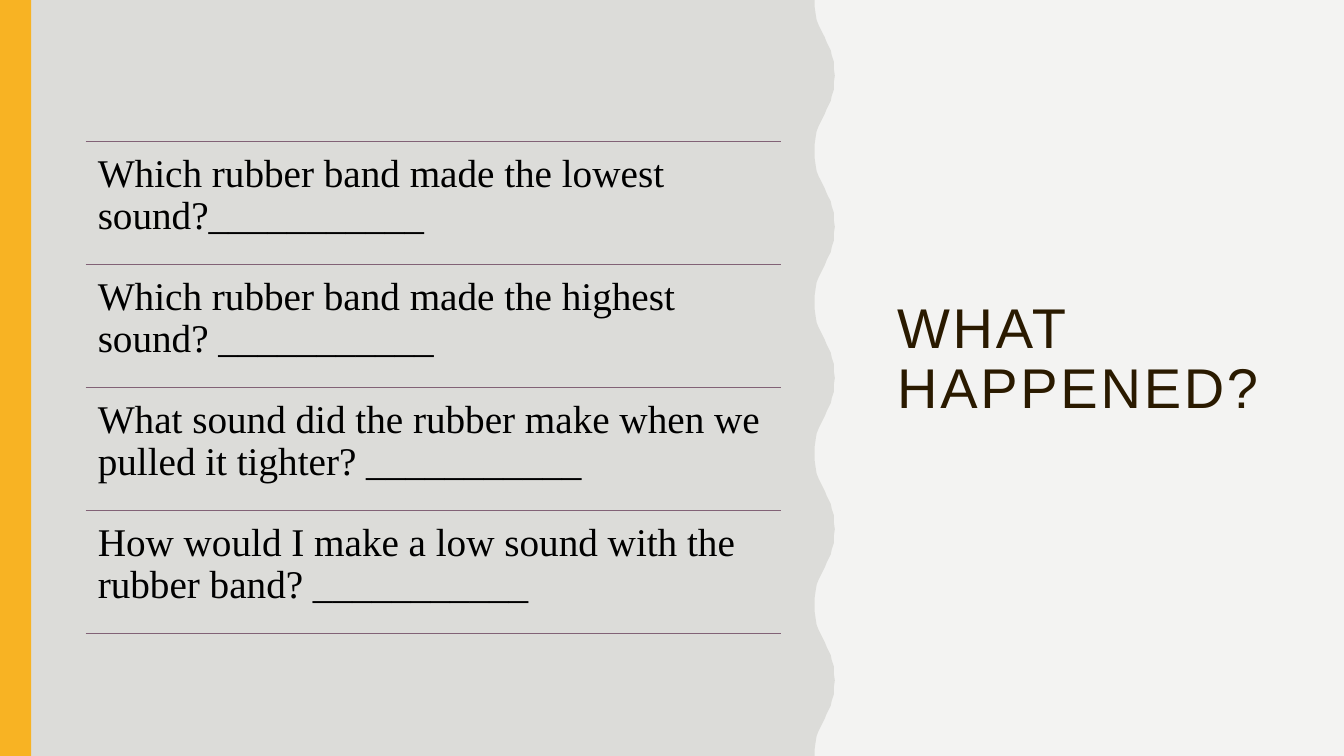
from pptx import Presentation
from pptx.dml.color import RGBColor
from pptx.enum import shapes, text
from pptx.oxml import xmlchemy
from pptx.util import Inches, Pt

PAPER = RGBColor(0xF3, 0xF3, 0xF2)
PANEL = RGBColor(0xDC, 0xDC, 0xD9)
GOLD = RGBColor(0xF8, 0xB3, 0x23)
BROWN = RGBColor(0x2A, 0x1A, 0x00)
BLACK = RGBColor(0x00, 0x00, 0x00)
PLUM = RGBColor(0x82, 0x62, 0x76)

QUESTIONS = [
    "Which rubber band made the lowest sound?___________",
    "Which rubber band made the highest sound? ___________",
    "What sound did the rubber make when we pulled it tighter? ___________",
    "How would I make a low sound with the rubber band? ___________",
]
LIST_LEFT, LIST_TOP, LIST_WIDTH, ROW_HEIGHT = 0.85, 1.4, 6.9, 1.22

# Half a wave, from trough to crest: (down, x)
HALF_WAVE = [
    (0, 8.08), (0.07, 8.08), (0.14, 8.09), (0.2, 8.1), (0.25, 8.12),
    (0.29, 8.14), (0.33, 8.16), (0.37, 8.18), (0.42, 8.2), (0.46, 8.22),
    (0.5, 8.24), (0.55, 8.25), (0.61, 8.27), (0.68, 8.27), (0.75, 8.28),
]
WAVE_PERIOD, WAVE_COUNT = 1.5, 5


def paint(shape, color):
    shape.shadow.inherit = False
    shape.fill.solid()
    shape.fill.fore_color.rgb = color
    shape.line.fill.background()


def add_wavy_panel(slide):
    mirrored = [(WAVE_PERIOD - down, x) for down, x in reversed(HALF_WAVE)]
    wave = HALF_WAVE + mirrored[1:]
    edge = [(Inches(x), Inches(n * WAVE_PERIOD + down))
            for n in range(WAVE_COUNT) for down, x in wave]
    outline = slide.shapes.build_freeform(0, 0)
    outline.add_line_segments(edge + [(0, Inches(7.5))], close=True)
    paint(outline.convert_to_shape(), PANEL)


def add_text(slide, wording, left, top, width, height, font_name, size, color):
    box = slide.shapes.add_textbox(
        Inches(left), Inches(top), Inches(width), Inches(height))
    frame = box.text_frame
    frame.word_wrap = True
    paragraph = frame.paragraphs[0]
    paragraph.text = wording
    paragraph.line_spacing = 0.9
    paragraph.font.name = font_name
    paragraph.font.size = Pt(size)
    paragraph.font.color.rgb = color
    return frame


def add_title(slide):
    title = add_text(slide, "WHAT HAPPENED?", 8.8, 0.53, 4, 6.09,
                     "Arial", 40, BROWN)
    title.vertical_anchor = text.MSO_ANCHOR.MIDDLE
    # Letter spacing of 2 points
    title.paragraphs[0].runs[0].font._element.set("spc", "200")


def add_question(slide, wording, top):
    question = add_text(slide, wording, LIST_LEFT, top, LIST_WIDTH, ROW_HEIGHT,
                        "Times New Roman", 28, BLACK)
    question.margin_left = question.margin_right = Inches(0.12)
    question.margin_top = question.margin_bottom = Inches(0.12)


def add_rule(slide, top):
    rule = slide.shapes.add_connector(
        shapes.MSO_CONNECTOR.STRAIGHT, Inches(LIST_LEFT), Inches(top),
        Inches(LIST_LEFT + LIST_WIDTH), Inches(top))
    rule.line.color.rgb = PLUM
    rule.line.width = Pt(0.5)
    properties = rule._element.spPr
    properties.append(xmlchemy.OxmlElement("a:effectLst"))


def main():
    deck = Presentation()
    deck.slide_width, deck.slide_height = Inches(13.33), Inches(7.5)
    slide = deck.slides.add_slide(deck.slide_layouts[6])

    # Backdrop
    slide.background.fill.solid()
    slide.background.fill.fore_color.rgb = PAPER
    add_wavy_panel(slide)
    gold_bar = slide.shapes.add_shape(
        shapes.MSO_SHAPE.RECTANGLE, 0, 0, Inches(0.31), Inches(7.5))
    paint(gold_bar, GOLD)

    add_title(slide)

    # Ruled list of questions
    for row, wording in enumerate(QUESTIONS):
        top = LIST_TOP + row * ROW_HEIGHT
        add_rule(slide, top)
        add_question(slide, wording, top)
    add_rule(slide, LIST_TOP + len(QUESTIONS) * ROW_HEIGHT)

    deck.save("out.pptx")


if __name__ == "__main__":
    main()
